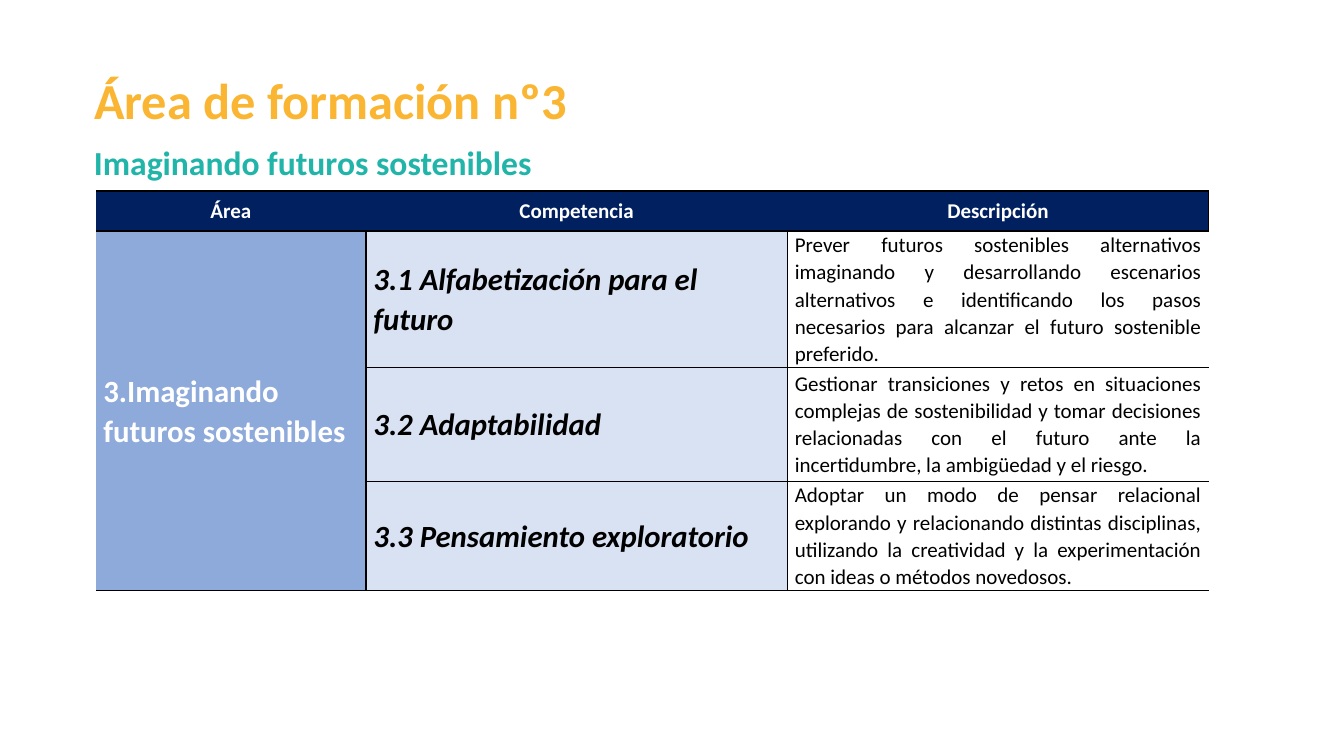
import pptx
import pptx.util
import pptx.dml.color
import pptx.enum.text
import pptx.oxml
import pptx.oxml.ns

Pt = pptx.util.Pt
ALIGN = pptx.enum.text.PP_ALIGN
ANCHOR = pptx.enum.text.MSO_ANCHOR

NAVY, BLUE, PALE = "002060", "8EAADB", "D9E2F3"
WHITE, BLACK = "FFFFFF", "000000"
LEFT, WIDTHS = 68.4, [193, 301, 301]
HEADS = ["Área", "Competencia", "Descripción"]
AREA = "3.Imaginando futuros sostenibles"
SKILLS = [
    ("3.1 Alfabetización para el futuro",
     "Prever futuros sostenibles alternativos imaginando y desarrollando "
     "escenarios alternativos e identificando los pasos necesarios para "
     "alcanzar el futuro sostenible preferido.", 95.5),
    ("3.2 Adaptabilidad",
     "Gestionar transiciones y retos en situaciones complejas de "
     "sostenibilidad y tomar decisiones relacionadas con el futuro ante la "
     "incertidumbre, la ambigüedad y el riesgo.", 81.5),
    ("3.3 Pensamiento exploratorio",
     "Adoptar un modo de pensar relacional explorando y relacionando "
     "distintas disciplinas, utilizando la creatividad y la experimentación "
     "con ideas o métodos novedosos.", 76.5),
]


def color(code):
    return pptx.dml.color.RGBColor.from_string(code)


def write(frame, text, size, code, align, bold=True, italic=False):
    frame.text = text
    para = frame.paragraphs[0]
    para.alignment = align
    font = para.runs[0].font
    font.name, font.size = "Calibri", Pt(size)
    font.bold, font.italic = bold, italic
    font.color.rgb = color(code)
    return para


def heading(shape, text, box, size, code):
    shape.left, shape.top, shape.width, shape.height = map(Pt, box)
    frame = shape.text_frame
    frame.word_wrap = True
    frame.auto_size = pptx.enum.text.MSO_AUTO_SIZE.NONE
    frame.vertical_anchor = ANCHOR.TOP
    write(frame, text, size, code, ALIGN.LEFT).line_spacing = 1.0


def border(cell, sides):
    """Rule the named sides (L, R, T, B) in black and clear the others."""
    props = cell._tc.get_or_add_tcPr()
    space = pptx.oxml.ns.nsdecls("a")
    for side in "LRTB":
        ink = "<a:noFill/>"
        if side in sides:
            ink = f'<a:solidFill><a:srgbClr val="{BLACK}"/></a:solidFill>'
        props.append(pptx.oxml.parse_xml(
            f'<a:ln{side} {space} w="{Pt(1)}">{ink}</a:ln{side}>'))


def fill_cell(cell, text, size, code, align, back=None, **style):
    cell.margin_left = cell.margin_right = Pt(5.4)
    cell.margin_top = cell.margin_bottom = 0
    cell.vertical_anchor = ANCHOR.MIDDLE
    write(cell.text_frame, text, size, code, align, **style).line_spacing = 1.06
    if back:
        cell.fill.solid()
        cell.fill.fore_color.rgb = color(back)
    else:
        cell.fill.background()


def grid(slide, top, heights, sides):
    """Add a plain table; sides gives the ruled edges of each column."""
    table = slide.shapes.add_table(
        len(heights), len(WIDTHS), Pt(LEFT), Pt(top),
        Pt(sum(WIDTHS)), Pt(sum(heights))).table
    table.first_row = table.horz_banding = False
    for col, width in zip(table.columns, WIDTHS):
        col.width = Pt(width)
    for row, height in zip(table.rows, heights):
        row.height = Pt(height)
        for cell, edges in zip(row.cells, sides):
            border(cell, edges)
    return table


def main():
    deck = pptx.Presentation()
    deck.slide_width, deck.slide_height = Pt(960), Pt(540)
    slide = deck.slides.add_slide(deck.slide_layouts[5])

    # Title and subtitle
    heading(slide.shapes.title, "Área de formación nº3",
            (60, 45.4, 646.5, 51), 36, "FAB632")
    heading(slide.shapes.add_textbox(0, 0, 0, 0), "Imaginando futuros sostenibles",
            (60, 98, 605.5, 36), 24, "21B4A9")

    # Header band
    band = grid(slide, 136.4, [28.6], ["TB", "TB", "RTB"])
    for cell, text in zip(band.rows[0].cells, HEADS):
        fill_cell(cell, text, 15, WHITE, ALIGN.CENTER, NAVY)

    # Area, skills and descriptions
    body = grid(slide, 165, [high for _, _, high in SKILLS], ["RTB", "LRTB", "LTB"])
    body.cell(0, 0).merge(body.cell(len(SKILLS) - 1, 0))
    fill_cell(body.cell(0, 0), AREA, 22, WHITE, ALIGN.JUSTIFY, BLUE)
    for row, (skill, about, _) in enumerate(SKILLS):
        fill_cell(body.cell(row, 1), skill, 22, BLACK, ALIGN.LEFT, PALE, italic=True)
        fill_cell(body.cell(row, 2), about, 15, BLACK, ALIGN.JUSTIFY, bold=False)

    deck.save("out.pptx")


if __name__ == "__main__":
    main()
